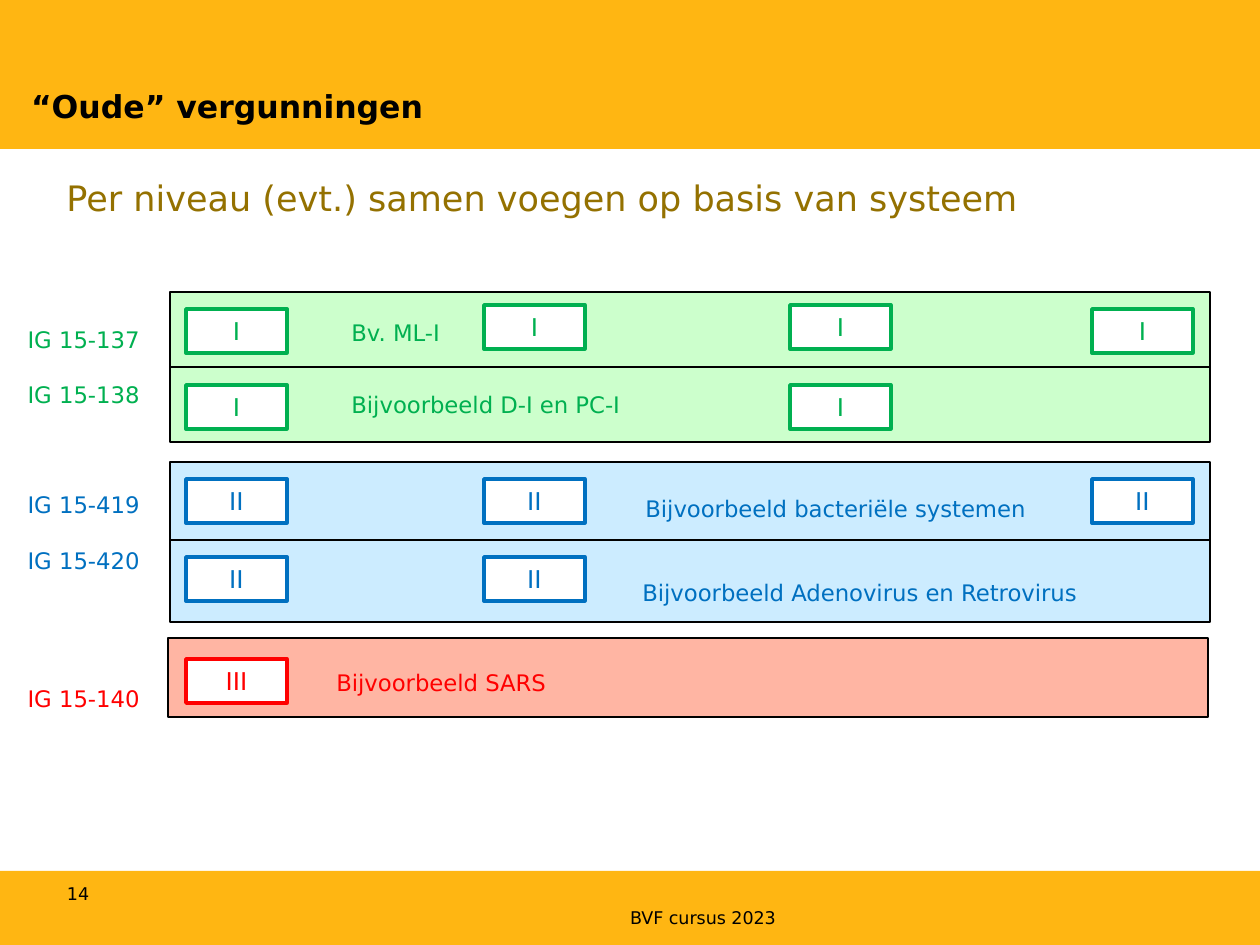
from pptx import Presentation
from pptx.dml.color import RGBColor
from pptx.enum.shapes import MSO_SHAPE
from pptx.enum.text import MSO_ANCHOR, MSO_AUTO_SIZE, PP_ALIGN
from pptx.oxml.ns import qn
from pptx.util import Emu, Pt
from lxml.etree import SubElement

PX_PER_INCH = 126
FONT = "DejaVu Sans"
COLORS = {
    "bar": "FFB612", "black": "000000", "white": "FFFFFF", "heading": "947100",
    "green": "00B050", "green_band": "CCFFCC",
    "blue": "0070C0", "blue_band": "CCECFF",
    "red": "FF0000", "red_band": "FFB5A3",
}
BANDS = [
    (170, 292, 75, "green"), (170, 367, 75, "green"),
    (170, 462, 79, "blue"), (170, 540, 82, "blue"),
    (168, 638, 79, "red"),
]
COLUMNS = [186, 484, 790, 1092]
LEVEL_ROWS = [
    ("I", "green", [(0, 309), (1, 305), (2, 305), (3, 309)]),
    ("I", "green", [(0, 385), (2, 385)]),
    ("II", "blue", [(0, 479), (1, 479), (3, 479)]),
    ("II", "blue", [(0, 557), (1, 557)]),
    ("III", "red", [(0, 659)]),
]
EXAMPLES = [
    ("Bv. ML-I", 339, 313, 120, "green"),
    ("Bijvoorbeeld D-I en PC-I", 339, 385, 309, "green"),
    ("Bijvoorbeeld bacteriële systemen", 633, 489, 411, "blue"),
    ("Bijvoorbeeld Adenovirus en Retrovirus", 630, 573, 469, "blue"),
    ("Bijvoorbeeld SARS", 324, 663, 239, "red"),
]
PERMITS = [
    ("IG 15-137", 0, "green"), ("IG 15-138", 28, "green"),
    ("IG 15-419", 83, "blue"), ("IG 15-420", 28, "blue"),
    ("IG 15-140", 111, "red"),
]


def px(length):
    return Emu(round(length * 914400 / PX_PER_INCH))


def rgb(color):
    return RGBColor.from_string(COLORS[color])


def style(paragraph, size, color, bold=False):
    for run in paragraph.runs:
        run.font.name = FONT
        run.font.size = Pt(size)
        run.font.bold = bold
        run.font.color.rgb = rgb(color)


def place(shape, left, top, width, height):
    shape.left, shape.top = px(left), px(top)
    shape.width, shape.height = px(width), px(height)


def clear_insets(frame):
    frame.margin_left = frame.margin_right = 0
    frame.margin_top = frame.margin_bottom = 0


def add_rect(slide, box, fill, line=None, line_width=1.5):
    rect = slide.shapes.add_shape(MSO_SHAPE.RECTANGLE, *map(px, box))
    rect.shadow.inherit = False
    rect.fill.solid()
    rect.fill.fore_color.rgb = rgb(fill)
    if line:
        rect.line.color.rgb = rgb(line)
        rect.line.width = Pt(line_width)
    else:
        rect.line.fill.background()
    return rect


def add_bar(slide, top, height):
    bar = add_rect(slide, (0, top, 1260, height), "bar")
    slide.shapes.element.insert(2, bar.element)


def add_level(slide, level, left, top, color):
    box = add_rect(slide, (left, top, 101, 44), "white", color, 2)
    frame = box.text_frame
    frame.text = level
    frame.vertical_anchor = MSO_ANCHOR.MIDDLE
    frame.paragraphs[0].alignment = PP_ALIGN.CENTER
    style(frame.paragraphs[0], 14, color)


def add_text(slide, text, box, size, color):
    frame = slide.shapes.add_textbox(*map(px, box)).text_frame
    frame.word_wrap = False
    frame.text = text
    style(frame.paragraphs[0], size, color)
    return frame


def fill_title(title):
    place(title, 31, 28, 570, 97)
    frame = title.text_frame
    frame.text = "“Oude” vergunningen"
    frame.word_wrap = False
    frame.auto_size = MSO_AUTO_SIZE.NONE
    frame.vertical_anchor = MSO_ANCHOR.BOTTOM
    clear_insets(frame)
    frame.paragraphs[0].alignment = PP_ALIGN.LEFT
    style(frame.paragraphs[0], 18, "black", True)


def fill_permits(body):
    place(body, 15, 319, 145, 399)
    frame = body.text_frame
    frame.text = "\n".join(permit for permit, _, _ in PERMITS)
    frame.word_wrap = False
    frame.auto_size = MSO_AUTO_SIZE.NONE
    for paragraph, (_, gap, color) in zip(frame.paragraphs, PERMITS):
        properties = paragraph._p.get_or_add_pPr()
        properties.set("marL", "0")
        properties.set("indent", "0")
        SubElement(properties, qn("a:buNone"))
        paragraph.space_before = px(gap)
        style(paragraph, 13, color)


def main():
    prs = Presentation()
    prs.slide_width, prs.slide_height = px(1260), px(945)
    slide = prs.slides.add_slide(prs.slide_layouts[1])

    add_bar(slide, 0, 149)
    add_bar(slide, 871, 74)
    fill_title(slide.shapes.title)
    fill_permits(slide.placeholders[1])
    add_text(slide, "Per niveau (evt.) samen voegen op basis van systeem",
             (54, 170, 989, 55), 20, "heading")

    for left, top, height, color in BANDS:
        add_rect(slide, (left, top, 1040, height), f"{color}_band", "black")
    for level, color, spots in LEVEL_ROWS:
        for column, top in spots:
            add_level(slide, level, COLUMNS[column], top, color)
    for example, left, top, width, color in EXAMPLES:
        add_text(slide, example, (left, top, width, 40), 13, color)

    for text, box in [("14", (67, 883, 49, 20)),
                      ("BVF cursus 2023", (630, 907, 563, 20))]:
        footer = add_text(slide, text, box, 10, "black")
        footer.word_wrap = True
        clear_insets(footer)

    prs.save("out.pptx")


if __name__ == "__main__":
    main()
